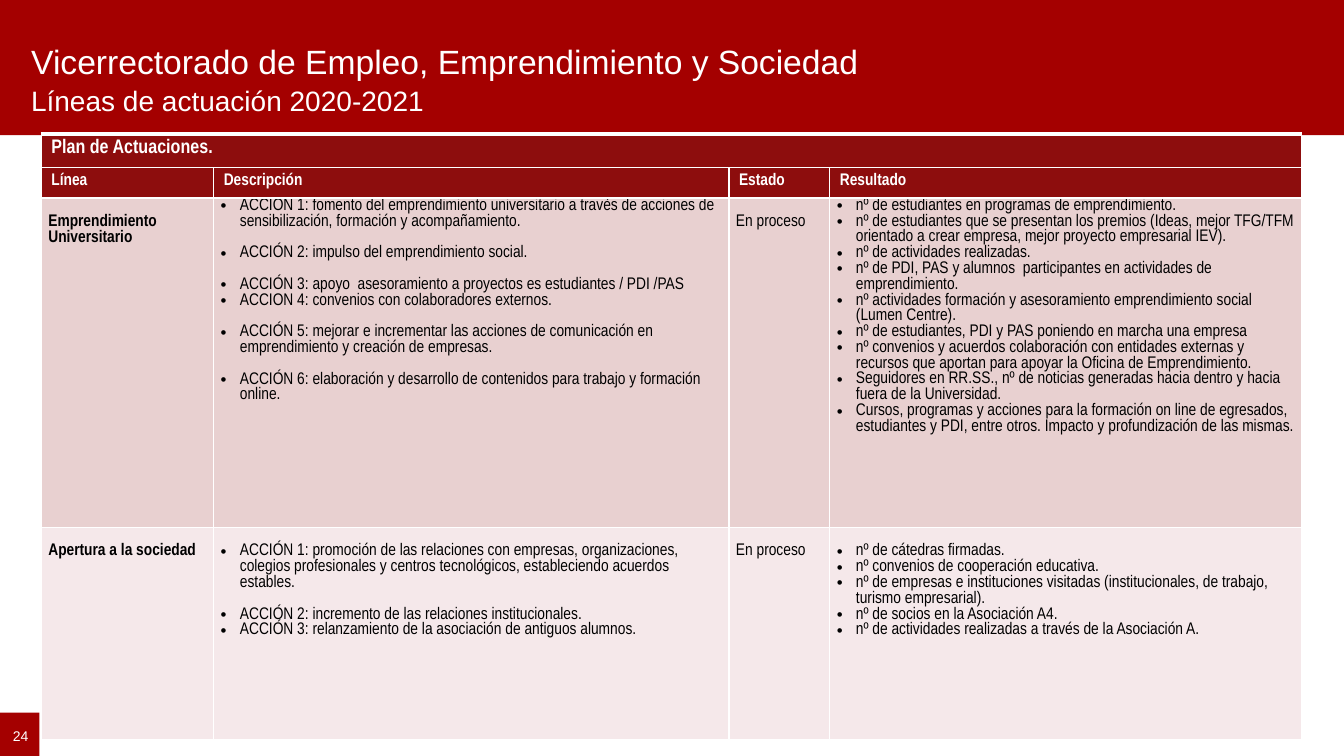
"""Builds the slide on the employment and entrepreneurship action plan."""
from lxml.etree import SubElement
from pptx import Presentation
from pptx.dml.color import RGBColor
from pptx.enum.shapes import MSO_SHAPE as Shape
from pptx.enum.text import MSO_ANCHOR as Anchor, PP_ALIGN as Align
from pptx.oxml.ns import qn
from pptx.util import Inches, Pt

RED, DARK_RED, WHITE, BLACK = "A40000", "8D0D0D", "FFFFFF", "000000"
LINE_GAP = 11.3


def color(hex_value):
    return RGBColor.from_string(hex_value)


def format_text(frame, size, font, hex_value, bold=False):
    for paragraph in frame.paragraphs:
        for run in paragraph.runs:
            run.font.size = Pt(size)
            run.font.name = font
            run.font.bold = bold
            run.font.color.rgb = color(hex_value)


prs = Presentation()
prs.slide_width, prs.slide_height = Inches(13.33), Inches(7.5)
slide = prs.slides.add_slide(prs.slide_layouts[5])
shapes = slide.shapes

for left, top, width, height in [(0, 7.07, 0.39, 0.43), (0, 0, 13.33, 1.34)]:
    band = shapes.add_shape(Shape.RECTANGLE, Inches(left), Inches(top), Inches(width), Inches(height))
    band.shadow.inherit = False
    band.fill.solid()
    band.fill.fore_color.rgb = color(RED)
    band.line.fill.background()

title = shapes.title
shapes.element.append(title.element)
title.left, title.top, title.width, title.height = Inches(0.21), Inches(0.16), Inches(10.2), Inches(0.7)
title.text_frame.text = "Vicerrectorado de Empleo, Emprendimiento y Sociedad"
subtitle = shapes.add_textbox(Inches(0.21), Inches(0.78), Inches(9.17), Inches(0.42))
subtitle.text_frame.text = "Líneas de actuación 2020-2021"
page_number = shapes.add_textbox(Inches(-0.06), Inches(7.1), Inches(0.53), Inches(0.4))
page_number.text_frame.text = "24"

for box, size, anchor, align in [
    (title, 24, Anchor.BOTTOM, Align.LEFT),
    (subtitle, 20, Anchor.TOP, Align.LEFT),
    (page_number, 10, Anchor.MIDDLE, Align.CENTER),
]:
    box.text_frame.word_wrap = True
    box.text_frame.vertical_anchor = anchor
    box.text_frame.paragraphs[0].alignment = align
    format_text(box.text_frame, size, "Arial", WHITE)

entrepreneurship_actions = [
    "ACCION 1: fomento del emprendimiento universitario a través de acciones de sensibilización, formación y acompañamiento.",
    "ACCIÓN 2: impulso del emprendimiento social.",
    "ACCIÓN 3: apoyo  asesoramiento a proyectos es estudiantes / PDI /PAS",
    "ACCION 4: convenios con colaboradores externos.",
    "ACCIÓN 5: mejorar e incrementar las acciones de comunicación en emprendimiento y creación de empresas.",
    "ACCIÓN 6: elaboración y desarrollo de contenidos para trabajo y formación online.",
]
entrepreneurship_results = [
    "nº de estudiantes en programas de emprendimiento.",
    "nº de estudiantes que se presentan los premios (Ideas, mejor TFG/TFM orientado a crear empresa, mejor proyecto empresarial IEV).",
    "nº de actividades realizadas.",
    "nº de PDI, PAS y alumnos  participantes en actividades de emprendimiento.",
    "nº actividades formación y asesoramiento emprendimiento social (Lumen Centre).",
    "nº de estudiantes, PDI y PAS poniendo en marcha una empresa",
    "nº convenios y acuerdos colaboración con entidades externas y recursos que aportan para apoyar la Oficina de Emprendimiento.",
    "Seguidores en RR.SS., nº de noticias generadas hacia dentro y hacia fuera de la Universidad.",
    "Cursos, programas y acciones para la formación on line de egresados, estudiantes y PDI, entre otros. Impacto y profundización de las mismas.",
]
society_actions = [
    "ACCIÓN 1: promoción de las relaciones con empresas, organizaciones, colegios profesionales y centros tecnológicos, estableciendo acuerdos estables.",
    "ACCIÓN 2: incremento de las relaciones institucionales.",
    "ACCIÓN 3: relanzamiento de la asociación de antiguos alumnos.",
]
society_results = [
    "nº de cátedras firmadas.",
    "nº convenios de cooperación educativa.",
    "nº de empresas e instituciones visitadas (institucionales, de trabajo, turismo empresarial).",
    "nº de socios en la Asociación A4.",
    "nº de actividades realizadas a través de la Asociación A.",
]
plan_rows = [
    (0.28, DARK_RED, [["Plan de Actuaciones."], [], [], []]),
    (0.23, DARK_RED, [["Línea"], ["Descripción"], ["Estado"], ["Resultado"]]),
    (3.27, "E8D0D0", [["Emprendimiento Universitario"], entrepreneurship_actions,
                      ["En proceso"], entrepreneurship_results]),
    (2.1, "F5E8EA", [["Apertura a la sociedad"], society_actions, ["En proceso"], society_results]),
]
spaced_actions = ("ACCIÓN 2", "ACCIÓN 3: apoyo", "ACCIÓN 5", "ACCIÓN 6")

plan = shapes.add_table(4, 4, Inches(0.41), Inches(1.33), Inches(12.5), Inches(5.88)).table
plan.first_row = plan.horz_banding = False
for column, width in zip(plan.columns, [1.71, 5.11, 1, 4.68]):
    column.width = Inches(width)

for r, (height, fill, contents) in enumerate(plan_rows):
    plan.rows[r].height = Inches(height)
    is_header = r < 2
    for c, lines in enumerate(contents):
        cell = plan.cell(r, c)
        is_list = not is_header and c in (1, 3)
        starts_at_top = is_list and r == 2
        cell.margin_left = cell.margin_right = Inches(0.1 if is_header else 0.07)
        cell.margin_top = Inches(0.05 if is_header else 0 if starts_at_top else 0.16)
        cell.margin_bottom = Inches(0.05 if is_header else 0)

        properties = cell._tc.get_or_add_tcPr()
        for side in ("lnL", "lnR", "lnT", "lnB"):
            points = 3 if r == 0 and side == "lnT" else 1
            border = SubElement(properties, qn(f"a:{side}"), w=str(Pt(points)))
            SubElement(SubElement(border, qn("a:solidFill")), qn("a:srgbClr"), val=WHITE)
        cell.fill.solid()
        cell.fill.fore_color.rgb = color(fill)

        cell.text_frame.text = "\n".join(lines)
        if is_list:
            for paragraph in cell.text_frame.paragraphs:
                bullet = paragraph._p.get_or_add_pPr()
                bullet.set("marL", str(Inches(0.19)))
                bullet.set("indent", str(Inches(-0.19)))
                SubElement(bullet, qn("a:buFont"), typeface="Arial")
                SubElement(bullet, qn("a:buChar"), char="•")
                if paragraph.text.startswith(spaced_actions):
                    paragraph.space_before = Pt(LINE_GAP)
        format_text(cell.text_frame, 14 if r == 0 else 12, "Arial Narrow",
                    WHITE if is_header else BLACK, is_header or c == 0)

plan.cell(0, 0).merge(plan.cell(0, 3))
prs.save("out.pptx")
